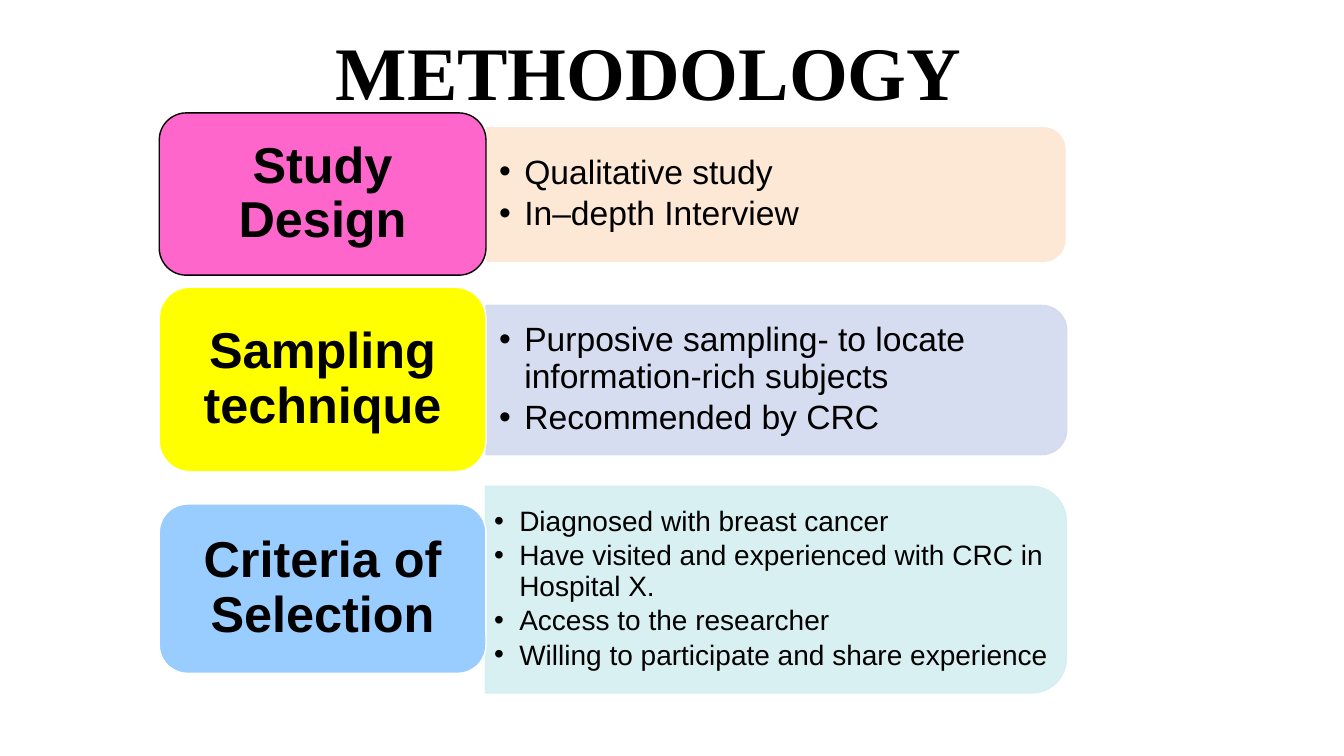
from lxml import etree
from pptx import Presentation
from pptx.dml.color import RGBColor
from pptx.enum.shapes import MSO_SHAPE
from pptx.enum.text import MSO_ANCHOR, MSO_AUTO_SIZE, PP_ALIGN
from pptx.oxml.ns import qn
from pptx.util import Pt

ROUNDED = MSO_SHAPE.ROUNDED_RECTANGLE
ROUNDED_END = MSO_SHAPE.ROUND_2_SAME_RECTANGLE
TOP, MIDDLE = MSO_ANCHOR.TOP, MSO_ANCHOR.MIDDLE
LEFT, CENTER = PP_ALIGN.LEFT, PP_ALIGN.CENTER
NO_AUTOFIT = MSO_AUTO_SIZE.NONE

PX = 9144
THEME = {
    "ink": "000000", "white": "FFFFFF",
    "pink": "FF66CC", "yellow": "FFFF00", "blue": "99CCFF",
    "peach": "FDE6D2", "lavender": "D3DAEF", "mint": "D4EFF0",
    "title_font": "Times New Roman", "body_font": "Arial",
    "title_size": 54, "label_size": 36, "list_size": 24, "small_list_size": 20,
}


def write_text(shape, lines, *, size, font="body_font", bold=False, align=LEFT,
               anchor=MIDDLE, inset=(10, 5), after=0, bullet=False):
    frame = shape.text_frame
    frame.word_wrap = True
    frame.auto_size = NO_AUTOFIT
    frame.vertical_anchor = anchor
    frame.margin_left = frame.margin_right = inset[0] * PX
    frame.margin_top = frame.margin_bottom = inset[1] * PX
    for index, line in enumerate(lines):
        para = frame.paragraphs[0] if index == 0 else frame.add_paragraph()
        para.alignment = align
        para.line_spacing = 0.9
        para.space_before = Pt(0)
        para.space_after = Pt(after)
        if bullet:
            para.level = 1
            properties = para._p.get_or_add_pPr()
            properties.set("marL", str(25 * PX))
            properties.set("indent", str(-25 * PX))
            etree.SubElement(properties, qn("a:buFont")).set("typeface", "Arial")
            etree.SubElement(properties, qn("a:buChar")).set("char", "•")
        span = para.add_run()
        span.text = line
        span.font.name = THEME[font]
        span.font.size = Pt(THEME[size])
        span.font.bold = bold
        span.font.color.rgb = RGBColor.from_string(THEME["ink"])


def paint(shape, fill, line, opacity=100):
    shape.shadow.inherit = False
    shape.fill.solid()
    shape.fill.fore_color.rgb = RGBColor.from_string(THEME[fill])
    shape.line.color.rgb = RGBColor.from_string(THEME[line])
    shape.line.width = Pt(1)
    if opacity < 100:
        for color in shape._element.spPr.iter(qn("a:srgbClr")):
            etree.SubElement(color, qn("a:alpha")).set("val", str(opacity * 1000))


deck = Presentation()
deck.slide_width = 1333 * PX
deck.slide_height = 750 * PX
page = deck.slides.add_slide(deck.slide_layouts[5])

title = page.shapes.title
title.left, title.top, title.width, title.height = [n * PX for n in (323, 30, 900, 125)]
write_text(title, ["METHODOLOGY"], size="title_size", font="title_font",
           bold=True, anchor=TOP)

LABEL_LEFT, LABEL_WIDTH = 158, 324
PANEL_LEFT, PANEL_WIDTH = LABEL_LEFT + LABEL_WIDTH, 576
LIST_WIDTH = 568

sections = [
    dict(label="Study Design", label_top=112, label_height=161,
         label_fill="pink", label_line="ink",
         panel_top=125, panel_height=135, panel_fill="peach", panel_line="white",
         size="list_size", inset=(13, 7), after=4,
         points=["Qualitative study", "In–depth Interview"]),
    dict(label="Sampling technique", label_top=285, label_height=183,
         label_fill="yellow", label_line="white",
         panel_top=303, panel_height=148, panel_fill="lavender", panel_line="lavender",
         size="list_size", inset=(13, 7), after=4,
         points=["Purposive sampling- to locate information-rich subjects",
                 "Recommended by CRC"]),
    dict(label="Criteria of Selection", label_top=500, label_height=168,
         label_fill="blue", label_line="white",
         panel_top=482, panel_height=205, panel_fill="mint", panel_line="mint",
         size="small_list_size", inset=(8, 4), after=3,
         points=["Diagnosed with breast cancer",
                 "Have visited and experienced with CRC in Hospital X.",
                 "Access to the researcher",
                 "Willing to participate and share experience"]),
]

for section in sections:
    top, height = section["panel_top"], section["panel_height"]
    turn = (PANEL_WIDTH - height) // 2
    panel = page.shapes.add_shape(ROUNDED_END, (PANEL_LEFT + turn) * PX, (top - turn) * PX,
                                  height * PX, PANEL_WIDTH * PX)
    panel.rotation = 90
    paint(panel, section["panel_fill"], section["panel_line"], opacity=90)

    points = page.shapes.add_textbox(PANEL_LEFT * PX, top * PX, LIST_WIDTH * PX, height * PX)
    write_text(points, section["points"], size=section["size"], inset=section["inset"],
               after=section["after"], bullet=True)

    label = page.shapes.add_shape(ROUNDED, LABEL_LEFT * PX, section["label_top"] * PX,
                                  LABEL_WIDTH * PX, section["label_height"] * PX)
    paint(label, section["label_fill"], section["label_line"])
    write_text(label, [section["label"]], size="label_size", bold=True, align=CENTER,
               inset=(15, 7))

deck.save("out.pptx")
